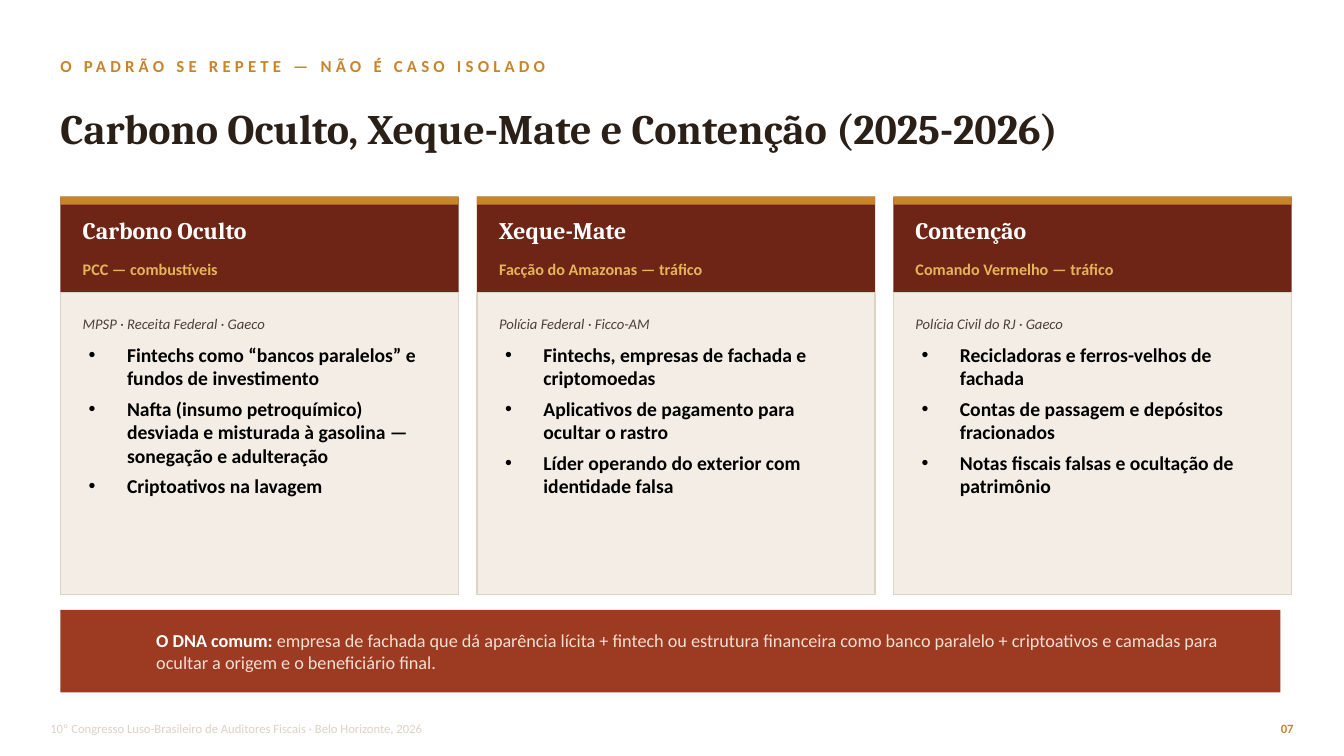
from lxml.etree import SubElement
from pptx import Presentation
from pptx.dml.color import RGBColor
from pptx.enum.shapes import MSO_SHAPE as Preset
from pptx.enum.text import MSO_ANCHOR as Anchor, PP_ALIGN as Align
from pptx.oxml.ns import qn
from pptx.util import Pt

PX = 9144
BODY, HEADING = "Calibri", "Cambria"
GOLD, MAROON, RUST = "C8842B", "6E2515", "9C3A22"
WHITE, SAND, CREAM = "FFFFFF", "DDD2C6", "F3EDE6"
LEFT, COLUMN_WIDTH, COLUMN_GAP = 60, 395, 18

COLUMNS = [
    ("Carbono Oculto", "PCC — combustíveis", "MPSP · Receita Federal · Gaeco", [
        "Fintechs como “bancos paralelos” e fundos de investimento",
        "Nafta (insumo petroquímico) desviada e misturada à gasolina — sonegação e adulteração",
        "Criptoativos na lavagem",
    ]),
    ("Xeque-Mate", "Facção do Amazonas — tráfico", "Polícia Federal · Ficco-AM", [
        "Fintechs, empresas de fachada e criptomoedas",
        "Aplicativos de pagamento para ocultar o rastro",
        "Líder operando do exterior com identidade falsa",
    ]),
    ("Contenção", "Comando Vermelho — tráfico", "Polícia Civil do RJ · Gaeco", [
        "Recicladoras e ferros-velhos de fachada",
        "Contas de passagem e depósitos fracionados",
        "Notas fiscais falsas e ocultação de patrimônio",
    ]),
]


def color(value):
    return RGBColor.from_string(value)


def emu(*lengths):
    return [length * PX for length in lengths]


def add_rectangle(slide, box, fill, line=None):
    shape = slide.shapes.add_shape(Preset.RECTANGLE, *emu(*box))
    shape.shadow.inherit = False
    shape.fill.solid()
    shape.fill.fore_color.rgb = color(fill)
    if line:
        shape.line.color.rgb = color(line)
        shape.line.width = Pt(1)
    else:
        shape.line.fill.background()


def add_bullet(paragraph, indent):
    properties = paragraph._p.get_or_add_pPr()
    properties.set("marL", str(indent * PX))
    properties.set("indent", str(-indent * PX))
    SubElement(properties, qn("a:buFont"), typeface="Arial")
    SubElement(properties, qn("a:buChar"), char="•")


def add_run(paragraph, text, size, fill, font=BODY, bold=False, italic=False, spacing=0):
    run = paragraph.add_run()
    run.text = text
    run.font.name = font
    run.font.size = Pt(size)
    run.font.bold = bold
    run.font.italic = italic
    run.font.color.rgb = color(fill)
    if spacing:
        run._r.get_or_add_rPr().set("spc", str(spacing * 100))


def add_text(slide, box, text, size, fill, anchor=Anchor.MIDDLE, align=Align.LEFT,
             bullet_indent=0, space_after=0, **style):
    frame = slide.shapes.add_textbox(*emu(*box)).text_frame
    frame.word_wrap = True
    frame.vertical_anchor = anchor
    frame.margin_left = frame.margin_right = frame.margin_top = frame.margin_bottom = 0
    lines = [text] if isinstance(text, str) else text
    for index, line in enumerate(lines):
        paragraph = frame.add_paragraph() if index else frame.paragraphs[0]
        if bullet_indent:
            add_bullet(paragraph, bullet_indent)
        paragraph.alignment = align
        paragraph.space_after = Pt(space_after)
        add_run(paragraph, line, size, fill, **style)
    return frame


def add_header(slide, left, top, width):
    add_text(slide, (left, top, width, 30), "O PADRÃO SE REPETE — NÃO É CASO ISOLADO",
             12, GOLD, bold=True, spacing=3)
    add_text(slide, (left, top + 32, width, 90),
             "Carbono Oculto, Xeque-Mate e Contenção (2025-2026)",
             30, "2B2018", font=HEADING, bold=True)


def add_column(slide, left, top, width, operation, target, agencies, methods):
    inner, inner_width = left + 22, width - 44
    add_rectangle(slide, (left, top, width, 95), MAROON)
    add_rectangle(slide, (left, top, width, 8), GOLD)
    add_text(slide, (inner, top + 13, inner_width, 40), operation, 17, WHITE,
             font=HEADING, bold=True)
    add_text(slide, (inner, top + 56, inner_width, 32), target, 11.5, "E6B45A", bold=True)
    add_rectangle(slide, (left, top + 95, width, 300), CREAM, SAND)
    add_text(slide, (inner, top + 111, inner_width, 30), agencies, 10.5, "4A413A", italic=True)
    add_text(slide, (inner + 6, top + 145, inner_width - 6, 235), methods, 14, "000000",
             anchor=Anchor.TOP, bullet_indent=38, space_after=5, bold=True)


def add_conclusion(slide, left, top, width, height):
    add_rectangle(slide, (left, top, width, height), RUST)
    frame = add_text(slide, (left + 95, top + 8, width - 120, height - 16),
                     "O DNA comum: ", 13, WHITE, bold=True)
    add_run(frame.paragraphs[0],
            "empresa de fachada que dá aparência lícita + fintech ou estrutura financeira "
            "como banco paralelo + criptoativos e camadas para ocultar a origem e o "
            "beneficiário final.", 13, "F3DFD3")


def add_footer(slide, left, top, width):
    add_text(slide, (left, top, 900, 30),
             "10º Congresso Luso-Brasileiro de Auditores Fiscais · Belo Horizonte, 2026",
             9, SAND)
    add_text(slide, (left + width - 60, top, 60, 30), "07", 9, GOLD,
             align=Align.RIGHT, bold=True)


def main():
    presentation = Presentation()
    presentation.slide_width, presentation.slide_height = emu(1333, 750)
    slide = presentation.slides.add_slide(presentation.slide_layouts[6])
    slide.background.fill.solid()
    slide.background.fill.fore_color.rgb = color(WHITE)
    add_header(slide, LEFT, 50, 1210)
    for index, column in enumerate(COLUMNS):
        left = LEFT + index * (COLUMN_WIDTH + COLUMN_GAP)
        add_column(slide, left, 195, COLUMN_WIDTH, *column)
    add_conclusion(slide, LEFT, 605, 1210, 82)
    add_footer(slide, 50, 708, 1233)
    presentation.save("out.pptx")


if __name__ == "__main__":
    main()
